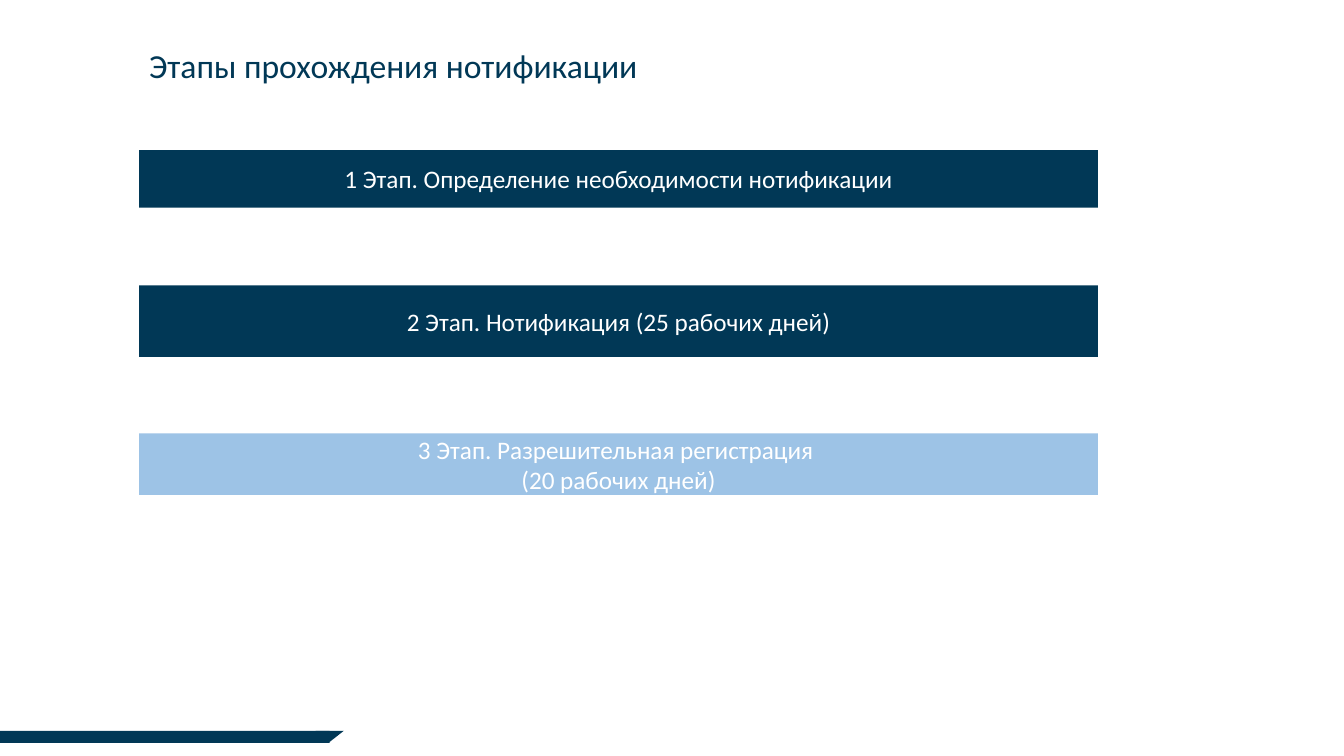
"""Build the slide on the stages of notification."""
from dataclasses import dataclass

from pptx import Presentation
from pptx.dml.color import RGBColor
from pptx.enum.shapes import MSO_SHAPE
from pptx.enum.text import MSO_ANCHOR, PP_ALIGN
from pptx.shapes.autoshape import Shape
from pptx.slide import Slide
from pptx.util import Emu, Pt

RECTANGLE = MSO_SHAPE.RECTANGLE
TRIANGLE = MSO_SHAPE.ISOSCELES_TRIANGLE
MIDDLE = MSO_ANCHOR.MIDDLE
LEFT = PP_ALIGN.LEFT
CENTER = PP_ALIGN.CENTER

EMU_PER_PX = 9144
SLIDE_WIDTH, SLIDE_HEIGHT = 1333, 750
CONTENT_LEFT, CONTENT_WIDTH = 138, 951
FOOTER_TOP = 725


@dataclass(frozen=True)
class Theme:
    """Colours, font and type sizes of the slide."""

    navy: str = "013856"
    light_blue: str = "9DC3E6"
    white: str = "FFFFFF"
    font: str = "Calibri"
    title_size: int = 24
    stage_size: int = 18


THEME = Theme()


@dataclass(frozen=True)
class Stage:
    """One stage bar with its lines of text."""

    lines: tuple[str, ...]
    top: int
    height: int
    fill: str = THEME.navy


STAGES = (
    Stage(("1 Этап. Определение необходимости нотификации",), 149, 57),
    Stage(("2 Этап. Нотификация (25 рабочих дней)",), 283, 71),
    Stage(
        ("3 Этап. Разрешительная регистрация ", "(20 рабочих дней)"),
        430,
        61,
        THEME.light_blue,
    ),
)


def px(length: int) -> Emu:
    """Turn a length in px into EMU."""
    return Emu(length * EMU_PER_PX)


def write_text(
    shape: Shape, lines: tuple[str, ...], *, size: int, color: str, align: PP_ALIGN
) -> None:
    """Write one paragraph per line, centred vertically in the shape."""
    frame = shape.text_frame
    frame.word_wrap = True
    frame.vertical_anchor = MIDDLE
    frame.text = "\n".join(lines)
    for paragraph in frame.paragraphs:
        paragraph.alignment = align
        font = paragraph.runs[0].font
        font.name = THEME.font
        font.size = Pt(size)
        font.color.rgb = RGBColor.from_string(color)


def add_block(
    slide: Slide,
    kind: MSO_SHAPE,
    left: int,
    top: int,
    width: int,
    height: int,
    fill: str,
) -> Shape:
    """Add a filled shape without outline or shadow."""
    shape = slide.shapes.add_shape(kind, px(left), px(top), px(width), px(height))
    shape.shadow.inherit = False
    shape.fill.solid()
    shape.fill.fore_color.rgb = RGBColor.from_string(fill)
    shape.line.fill.background()
    return shape


def add_footer(slide: Slide) -> None:
    """Add the footer band with its slanted end."""
    slant = add_block(slide, TRIANGLE, 313, FOOTER_TOP, 28, 11, THEME.navy)
    slant.rotation = 180
    add_block(slide, RECTANGLE, 0, FOOTER_TOP, 327, 12, THEME.navy)


def add_title(slide: Slide, title: str) -> None:
    """Add the slide title."""
    shape = slide.shapes.add_textbox(
        px(CONTENT_LEFT), px(38), px(CONTENT_WIDTH), px(53)
    )
    write_text(shape, (title,), size=THEME.title_size, color=THEME.navy, align=LEFT)


def add_stage(slide: Slide, stage: Stage) -> None:
    """Add one stage bar."""
    shape = add_block(
        slide,
        RECTANGLE,
        CONTENT_LEFT,
        stage.top,
        CONTENT_WIDTH,
        stage.height,
        stage.fill,
    )
    write_text(
        shape, stage.lines, size=THEME.stage_size, color=THEME.white, align=CENTER
    )


def main() -> None:
    """Build and save the presentation."""
    presentation = Presentation()
    presentation.slide_width = px(SLIDE_WIDTH)
    presentation.slide_height = px(SLIDE_HEIGHT)
    slide = presentation.slides.add_slide(presentation.slide_layouts[6])
    add_footer(slide)
    add_title(slide, "Этапы прохождения нотификации")
    for stage in STAGES:
        add_stage(slide, stage)
    presentation.save("out.pptx")


if __name__ == "__main__":
    main()
